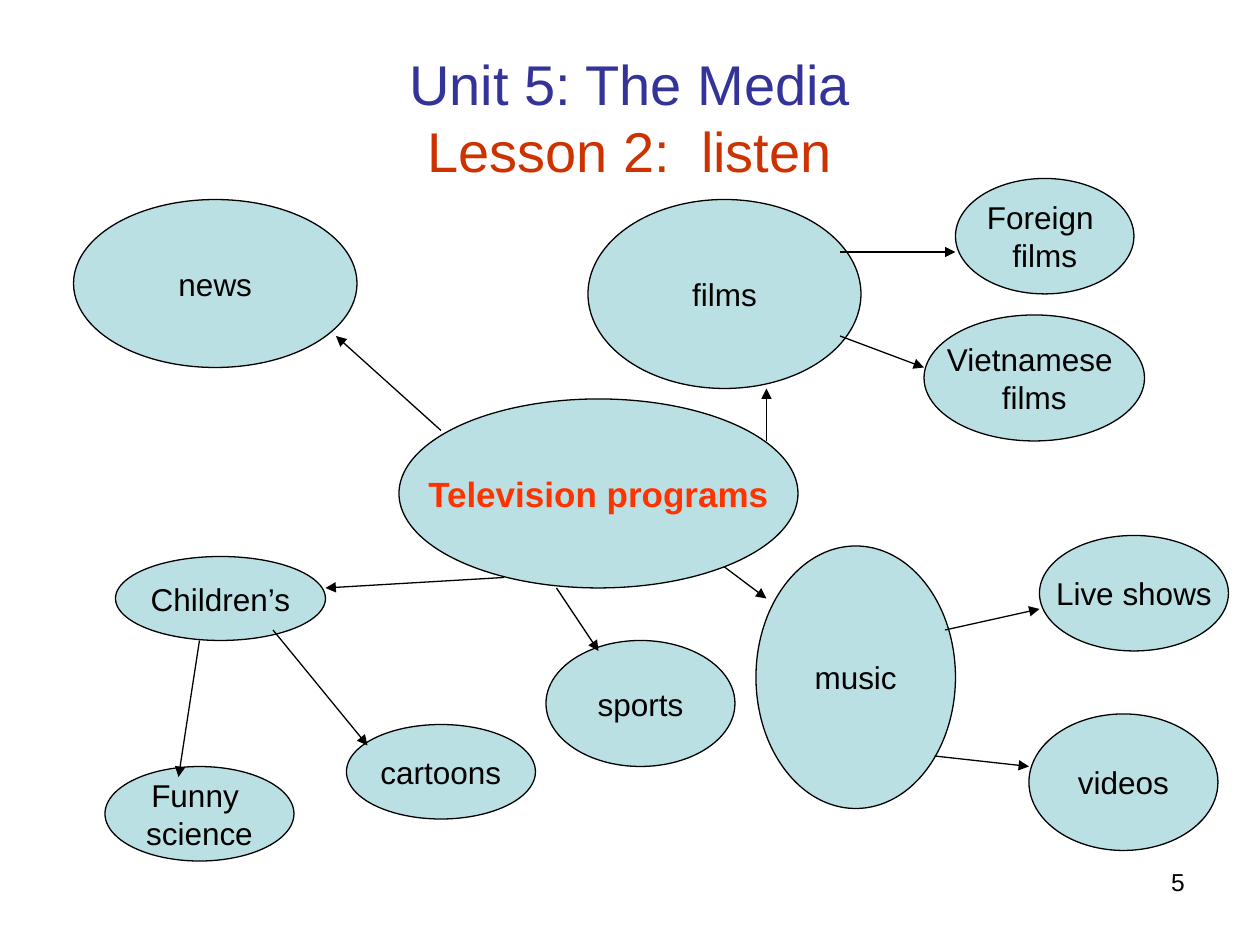
from lxml.etree import SubElement
from pptx import Presentation
from pptx.dml.color import RGBColor
from pptx.enum.shapes import MSO_CONNECTOR, MSO_SHAPE
from pptx.enum.text import MSO_ANCHOR, PP_ALIGN
from pptx.oxml.ns import qn
from pptx.util import Inches, Pt

COLORS = {"fill": "BBE0E3", "black": "000000", "topic": "FF3300",
          "unit": "333399", "lesson": "CC3300"}

prs = Presentation()
prs.slide_width, prs.slide_height = Inches(10), Inches(7.5)
s = prs.slides.add_slide(prs.slide_layouts[6])
CELL = prs.slide_width / 120  # the slide is a grid of 120 columns by 90 rows


def grid(*cells):
    return [round(c * CELL) for c in cells]


def style(font, size, color, bold=False):
    font.name, font.size, font.bold = "Arial", Pt(size), bold
    font.color.rgb = RGBColor.from_string(COLORS[color])


# Slide number
tf = s.shapes.add_textbox(*grid(86, 82, 28, 6.25)).text_frame
tf.word_wrap = True
p = tf.paragraphs[0]
p.text, p.alignment = "5", PP_ALIGN.RIGHT
style(p.font, 14, "black")

# Title
tf = s.shapes.add_textbox(*grid(6, 3.6, 108, 15)).text_frame
tf.word_wrap, tf.vertical_anchor = True, MSO_ANCHOR.MIDDLE
p = tf.paragraphs[0]
p.alignment = PP_ALIGN.CENTER
r = p.add_run()
r.text = "Unit 5: The Media"
style(r.font, 32, "unit")
p.add_line_break()
r = p.add_run()
r.text = "Lesson 2:  listen"
style(r.font, 32, "lesson")

# Mind map bubbles: text, left, top, width, height in grid cells
TOPIC = "Television programs"
bubbles = [
    (TOPIC, 38, 38, 38, 18),
    ("news", 7, 19, 27, 16),
    ("films", 56, 19, 26, 18),
    ("Children’s", 11, 53, 20, 8),
    ("Funny \nscience", 10, 73, 18, 9),
    ("cartoons", 33, 69, 18, 9),
    ("music", 72, 52, 19, 25),
    ("Foreign \nfilms", 91, 17, 17, 11),
    ("Vietnamese \nfilms", 88, 30, 21, 12),
    ("Live shows", 99, 51, 18, 11),
    ("videos", 98, 68, 18, 13),
    ("sports", 52, 61, 18, 12),
]
for text, *box in bubbles:
    sp = s.shapes.add_shape(MSO_SHAPE.OVAL, *grid(*box))
    sp.shadow.inherit = False
    sp.fill.solid()
    sp.fill.fore_color.rgb = RGBColor.from_string(COLORS["fill"])
    sp.line.color.rgb = RGBColor.from_string(COLORS["black"])
    sp.line.width = Pt(0.75)
    tf = sp.text_frame
    tf.text = text
    tf.word_wrap, tf.vertical_anchor = False, MSO_ANCHOR.MIDDLE
    for p in tf.paragraphs:
        p.alignment = PP_ALIGN.CENTER
        if text == TOPIC:
            style(p.font, 20, "topic", bold=True)
        else:
            style(p.font, 18, "black")

# Arrows: start column and row, end column and row
arrows = [
    (48, 55, 31, 56), (42, 41, 32, 32), (73, 42, 73, 37), (69, 54, 73, 57),
    (80, 24, 91, 24), (80, 32, 88, 35), (90, 60, 99, 58), (89, 72, 98, 73),
    (26, 60, 35, 71), (19, 61, 17, 74), (53, 56, 57, 62),
]
for ends in arrows:
    arrow = s.shapes.add_connector(MSO_CONNECTOR.STRAIGHT, *grid(*ends))
    arrow.line.color.rgb = RGBColor.from_string(COLORS["black"])
    arrow.line.width = Pt(0.75)
    SubElement(arrow.line._get_or_add_ln(), qn("a:tailEnd"), type="triangle")
    SubElement(arrow._element.spPr, qn("a:effectLst"))

prs.save("out.pptx")
